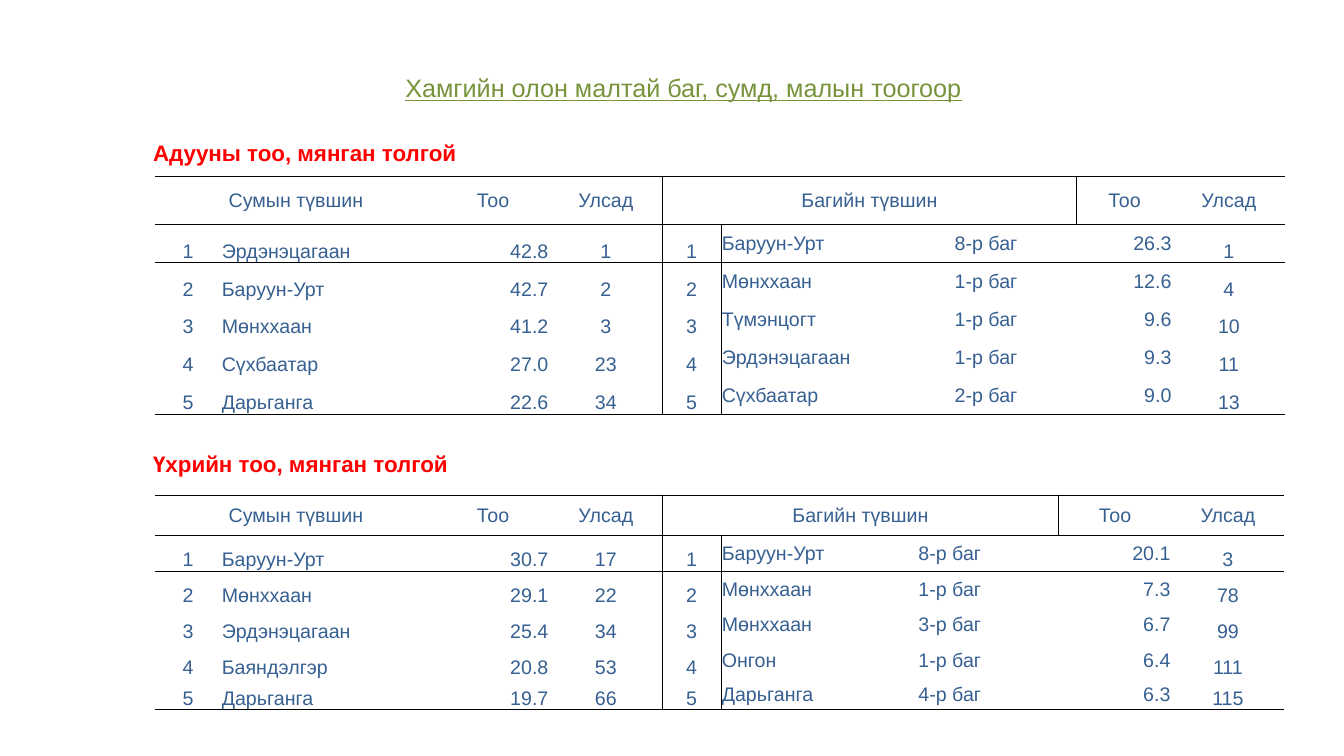
import pptx
import pptx.util
import pptx.dml.color
import pptx.enum.text
import pptx.oxml
import pptx.oxml.ns

Inches, Pt = pptx.util.Inches, pptx.util.Pt
ALIGN = pptx.enum.text.PP_ALIGN
ANCHOR = pptx.enum.text.MSO_ANCHOR

COLORS = {"title": "77933C", "heading": "FF0000", "table": "376092", "rule": "000000"}
FONT = "Arial"
NO_STYLE = "{2D5ABB26-0587-4C30-8999-92F81FD0307C}"

TITLE = "Хамгийн олон малтай баг, сумд, малын тоогоор"
HEADER = ["Сумын түвшин", "", "Тоо", "Улсад", "Багийн түвшин", "", "", "Тоо", "Улсад"]
SECTIONS = [
    {
        "heading": "Адууны тоо, мянган толгой", "heading_top": 1.33,
        "top": 1.75, "height": 2.36, "header_row": 0.48, "last_row": 0.38,
        "cols": [0.65, 2.14, 1.12, 1.12, 0.58, 2.31, 1.22, 0.95, 1.12],
        "rows": [
            ("Эрдэнэцагаан", "42.8", "1", "Баруун-Урт", "8-р баг", "26.3", "1"),
            ("Баруун-Урт", "42.7", "2", "Мөнххаан", "1-р баг", "12.6", "4"),
            ("Мөнххаан", "41.2", "3", "Түмэнцогт", "1-р баг", "9.6", "10"),
            ("Сүхбаатар", "27.0", "23", "Эрдэнэцагаан", "1-р баг", "9.3", "11"),
            ("Дарьганга", "22.6", "34", "Сүхбаатар", "2-р баг", "9.0", "13"),
        ],
    },
    {
        "heading": "Үхрийн тоо, мянган толгой", "heading_top": 4.42,
        "top": 4.91, "height": 2.13, "header_row": 0.4, "last_row": 0.31,
        "cols": [0.65, 2.14, 1.12, 1.12, 0.58, 1.95, 1.4, 1.12, 1.12],
        "rows": [
            ("Баруун-Урт", "30.7", "17", "Баруун-Урт", "8-р баг", "20.1", "3"),
            ("Мөнххаан", "29.1", "22", "Мөнххаан", "1-р баг", "7.3", "78"),
            ("Эрдэнэцагаан", "25.4", "34", "Мөнххаан", "3-р баг", "6.7", "99"),
            ("Баяндэлгэр", "20.8", "53", "Онгон", "1-р баг", "6.4", "111"),
            ("Дарьганга", "19.7", "66", "Дарьганга", "4-р баг", "6.3", "115"),
        ],
    },
]
C, L, R = ALIGN.CENTER, ALIGN.LEFT, ALIGN.RIGHT
COL_ALIGN = [C, L, R, C, C, L, L, R, C]
MIDDLE_COLS = (5, 6, 7)
HEADER_SPANS = [(0, 1), (4, 6)]
LAST_LEFT_COL = 3
CELL_MARGINS = {"margin_left": Inches(0.01), "margin_right": Inches(0.01),
                "margin_top": Inches(0.01), "margin_bottom": 0}


def write(tf, text, color, align=L, **font):
    p = tf.paragraphs[0]
    p.alignment = align
    r = p.add_run()
    r.text = text
    r.font.name = FONT
    r.font.color.rgb = pptx.dml.color.RGBColor.from_string(COLORS[color])
    for name, value in font.items():
        setattr(r.font, name, value)


def place(shape, left, top, width, height):
    shape.left, shape.top = Inches(left), Inches(top)
    shape.width, shape.height = Inches(width), Inches(height)


def add_borders(cell, sides):
    tcPr = cell._tc.get_or_add_tcPr()
    for side in sides:
        tcPr.append(pptx.oxml.parse_xml(
            f'<a:ln{side} {pptx.oxml.ns.nsdecls("a")} w="{Pt(0.5)}"><a:solidFill>'
            f'<a:srgbClr val="{COLORS["rule"]}"/></a:solidFill></a:ln{side}>'))


def border_sides(row, col, last_row):
    """Sides in schema order: left, right, top, bottom."""
    tests = {"L": col == LAST_LEFT_COL + 1, "R": col == LAST_LEFT_COL,
             "T": row <= 1, "B": row in (0, last_row)}
    return [side for side, drawn in tests.items() if drawn]


def add_ranking(s, section):
    data = [HEADER] + [(str(n), *row[:3], str(n), *row[3:])
                       for n, row in enumerate(section["rows"], 1)]
    last = len(data) - 1
    cols = section["cols"]
    table = s.shapes.add_table(len(data), len(cols), Inches(1.54), Inches(section["top"]),
                               Inches(sum(cols)), Inches(section["height"])).table
    table.first_row = table.horz_banding = False
    table._tbl.tblPr.find(pptx.oxml.ns.qn("a:tableStyleId")).text = NO_STYLE

    inner = (section["height"] - section["header_row"] - section["last_row"]) / (last - 1)
    heights = [section["header_row"]] + [inner] * (last - 1) + [section["last_row"]]
    for column, width in zip(table.columns, cols):
        column.width = Inches(width)
    for row, height in zip(table.rows, heights):
        row.height = Inches(height)
    for first, end in HEADER_SPANS:
        table.cell(0, first).merge(table.cell(0, end))

    for i, texts in enumerate(data):
        for j, text in enumerate(texts):
            cell = table.cell(i, j)
            for name, value in CELL_MARGINS.items():
                setattr(cell, name, value)
            middle = i == 0 or j in MIDDLE_COLS
            cell.vertical_anchor = ANCHOR.MIDDLE if middle else ANCHOR.BOTTOM
            add_borders(cell, border_sides(i, j, last))
            cell.fill.background()
            if text:
                write(cell.text_frame, text, "table", COL_ALIGN[j] if i else C, size=Pt(14))


def main():
    prs = pptx.Presentation()
    prs.slide_width, prs.slide_height = Inches(13.33), Inches(7.5)
    s = prs.slides.add_slide(prs.slide_layouts[5])

    title = s.shapes.title
    place(title, 3.92, 0.67, 5.83, 0.4)
    title.text_frame.auto_size = pptx.enum.text.MSO_AUTO_SIZE.NONE
    title.text_frame.vertical_anchor = ANCHOR.TOP
    write(title.text_frame, TITLE, "title", size=Pt(18), underline=True)

    for section in SECTIONS:
        box = s.shapes.add_textbox(Inches(1.42), Inches(section["heading_top"]),
                                   Inches(5.83), Inches(0.37))
        box.text_frame.word_wrap = True
        write(box.text_frame, section["heading"], "heading", size=Pt(16), bold=True)
        add_ranking(s, section)

    prs.save("out.pptx")


if __name__ == "__main__":
    main()
